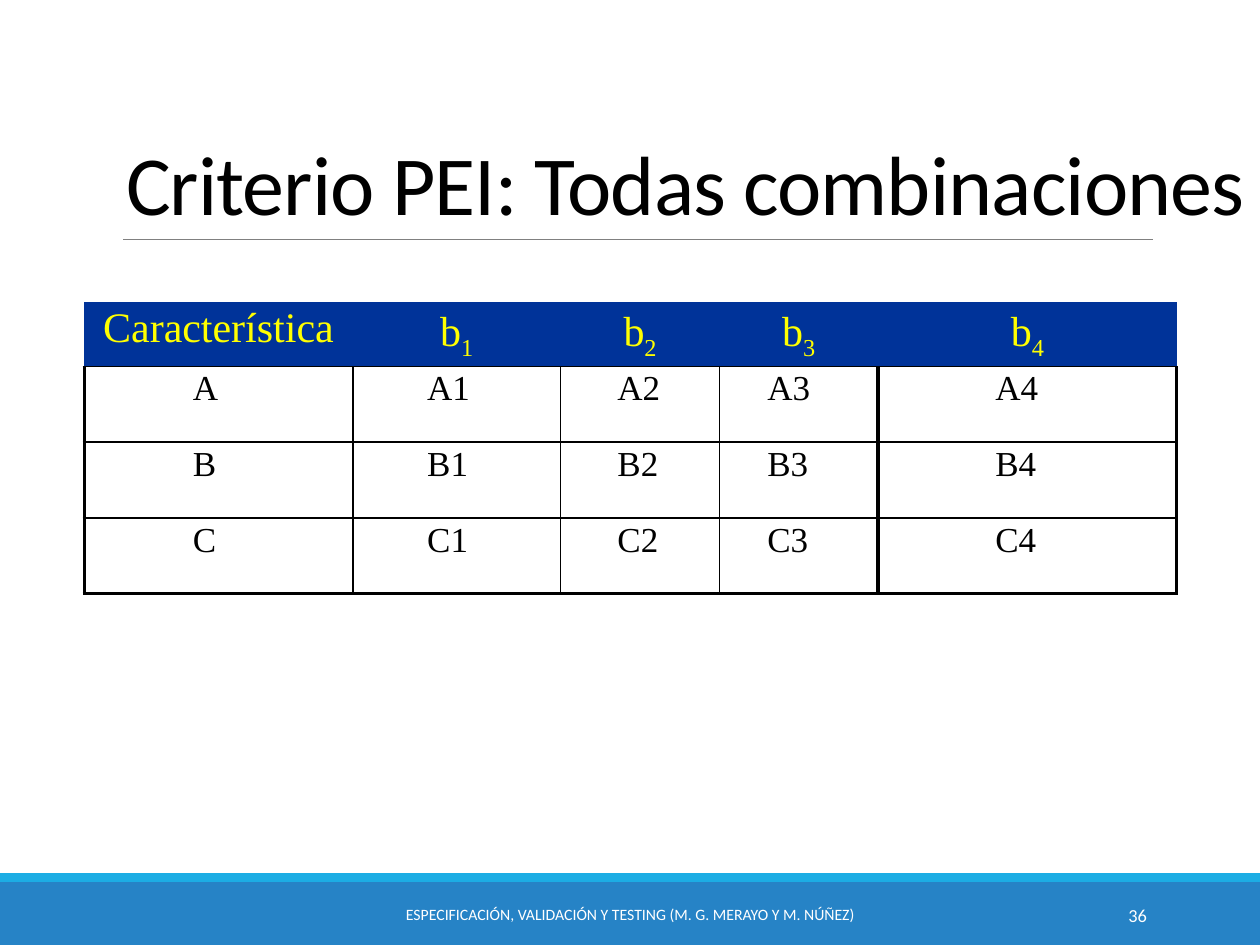
from lxml.etree import SubElement
from pptx import Presentation
from pptx.dml.color import RGBColor
from pptx.enum.shapes import MSO_CONNECTOR, MSO_SHAPE
from pptx.enum.text import MSO_ANCHOR, MSO_AUTO_SIZE, PP_ALIGN
from pptx.oxml.ns import qn
from pptx.util import Inches, Pt

BLACK = RGBColor(0, 0, 0)
WHITE = RGBColor(255, 255, 255)
GRAY = RGBColor(0x80, 0x80, 0x80)
BLUE = RGBColor(0x26, 0x83, 0xC6)
CYAN = RGBColor(0x1C, 0xAD, 0xE4)
NAVY = RGBColor(0x00, 0x33, 0x99)
YELLOW = RGBColor(255, 255, 0)
THIN, THICK = 1, 2.25


class SlideBuilder:
    """Build the elements of one slide in a shared style."""

    sans = "Calibri"
    serif = "Times New Roman"

    def __init__(self, prs):
        self.s = prs.slides.add_slide(prs.slide_layouts[5])

    def font(self, r, name, size, color):
        r.font.name = name
        r.font.size = Pt(size)
        r.font.color.rgb = color

    def title(self, text, x, y, w, h):
        sp = self.s.shapes.title
        sp.left, sp.top, sp.width, sp.height = map(Inches, (x, y, w, h))
        tf = sp.text_frame
        tf.text = text
        tf.word_wrap = True
        tf.auto_size = MSO_AUTO_SIZE.NONE
        tf.vertical_anchor = MSO_ANCHOR.BOTTOM
        p = tf.paragraphs[0]
        p.alignment = PP_ALIGN.LEFT
        p.line_spacing = 0.85
        r = p.runs[0]
        self.font(r, self.sans, 48, BLACK)
        r.font._element.set("spc", "-50")

    def band(self, x, y, w, h, color):
        sp = self.s.shapes.add_shape(MSO_SHAPE.RECTANGLE, *map(Inches, (x, y, w, h)))
        sp.shadow.inherit = False
        sp.fill.solid()
        sp.fill.fore_color.rgb = color
        sp.line.fill.background()

    def rule(self, x1, x2, y):
        ln = self.s.shapes.add_connector(
            MSO_CONNECTOR.STRAIGHT, *map(Inches, (x1, y, x2, y)))
        ln.line.color.rgb = GRAY
        ln.line.width = Pt(0.5)
        SubElement(ln._element.spPr, qn("a:effectLst"))

    def label(self, text, x, y, w, h, size, align):
        tf = self.s.shapes.add_textbox(*map(Inches, (x, y, w, h))).text_frame
        tf.text = text
        tf.word_wrap = True
        tf.vertical_anchor = MSO_ANCHOR.MIDDLE
        p = tf.paragraphs[0]
        p.alignment = align
        self.font(p.runs[0], self.sans, size, WHITE)

    def borders(self, cell, widths):
        tcPr = cell._tc.get_or_add_tcPr()
        for side, width in zip("LRTB", widths):
            ln = SubElement(tcPr, qn(f"a:ln{side}"), w=str(Pt(width)))
            if width:
                fill = SubElement(ln, qn("a:solidFill"))
                SubElement(fill, qn("a:srgbClr"), val=str(BLACK))
            else:
                SubElement(ln, qn("a:noFill"))

    def cell(self, cell, text, subscript, size, color, fill, widths, indent=None):
        self.borders(cell, widths)
        cell.fill.solid()
        cell.fill.fore_color.rgb = fill
        p = cell.text_frame.paragraphs[0]
        p.line_spacing = 0.9
        pPr = p._p.get_or_add_pPr()
        SubElement(SubElement(pPr, qn("a:spcBef")), qn("a:spcPct"), val="30000")
        if indent is None:
            p.alignment = PP_ALIGN.CENTER
        else:
            pPr.set("marL", str(Inches(indent)))
        for part in filter(None, (text, subscript)):
            r = p.add_run()
            r.text = part
            self.font(r, self.serif, size, color)
        if subscript:
            r.font._element.set("baseline", "-25000")

    def table(self, names, x, y, cols, rows, indents):
        w, h = sum(cols), sum(rows)
        tbl = self.s.shapes.add_table(
            len(rows), len(cols), *map(Inches, (x, y, w, h))).table
        tbl.horz_banding = False
        for column, width in zip(tbl.columns, cols):
            column.width = Inches(width)
        for row, height in zip(tbl.rows, rows):
            row.height = Inches(height)
        last = len(cols) - 1
        for j in range(len(cols)):
            head, sub = ("b", str(j)) if j else ("Característica", "")
            self.cell(tbl.cell(0, j), head, sub, 24, YELLOW, NAVY, (0, 0, 0, THIN))
            for i, name in enumerate(names, 1):
                widths = (THICK if j in (0, last) else THIN,
                          THICK if j >= last - 1 else THIN,
                          THIN,
                          THICK if i == len(names) else THIN)
                text = f"{name}{j}" if j else name
                self.cell(tbl.cell(i, j), text, "", 20, BLACK, WHITE, widths, indents[j])


def main():
    prs = Presentation()
    prs.slide_width, prs.slide_height = Inches(10), Inches(7.5)
    b = SlideBuilder(prs)
    b.band(0, 7, 10, 0.5, BLUE)
    b.band(0, 6.93, 10, 0.07, CYAN)
    b.rule(0.98, 9.15, 1.9)
    b.label("ESPECIFICACIÓN, VALIDACIÓN Y TESTING (M. G. MERAYO Y M. NÚÑEZ)",
            3.02, 7.06, 3.96, 0.4, 9, PP_ALIGN.CENTER)
    b.label("36", 8.12, 7.06, 1.08, 0.4, 10.5, PP_ALIGN.RIGHT)
    b.table("ABC", 0.67, 2.4, (2.13, 1.65, 1.26, 1.26, 2.37),
            (0.49, 0.6, 0.6, 0.6), (0.76, 0.49, 0.35, 0.28, 0.83))
    b.title("Criterio PEI: Todas combinaciones", 0.9, 0.31, 9.1, 1.59)
    prs.save("out.pptx")


if __name__ == "__main__":
    main()
